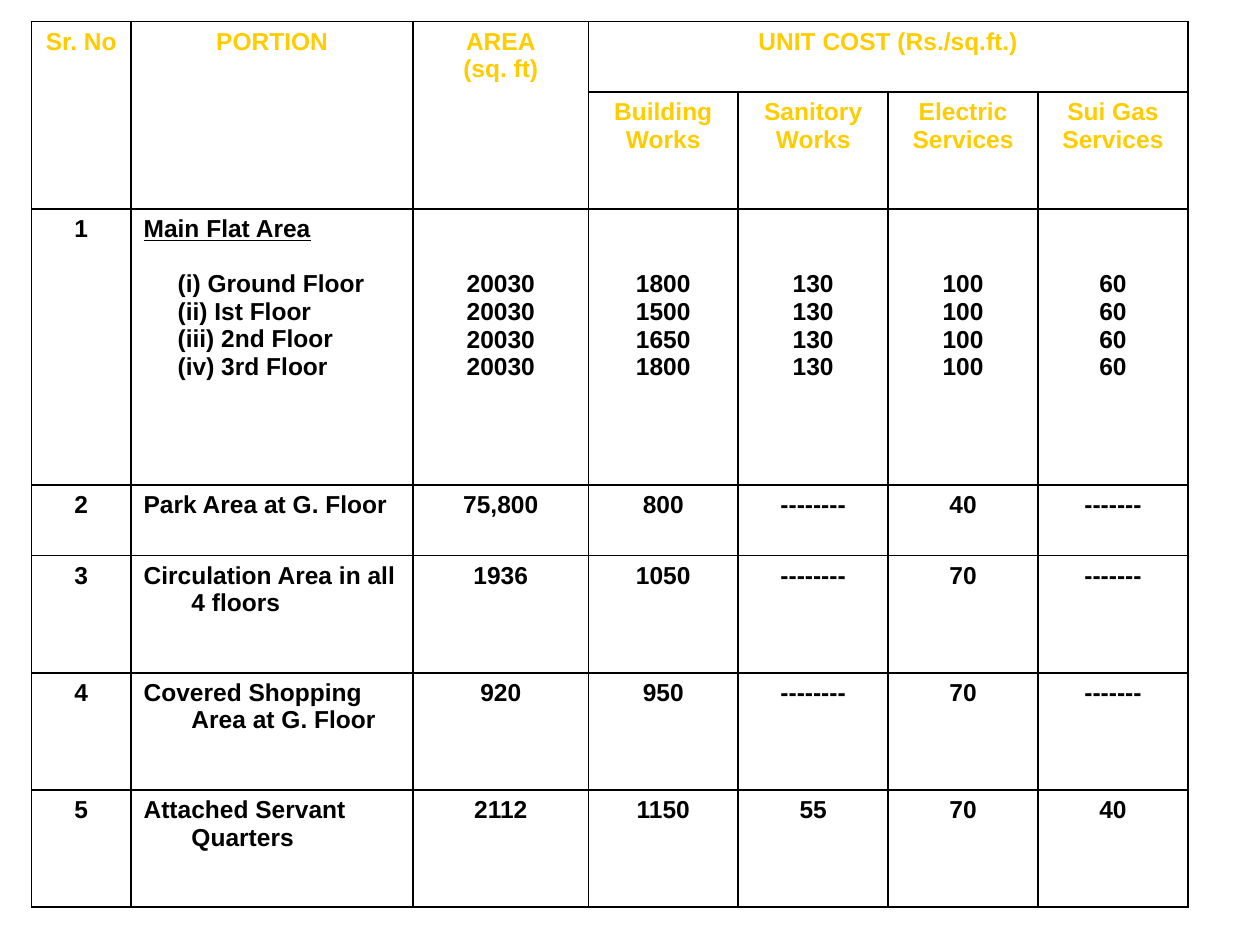
from dataclasses import dataclass

from lxml.etree import SubElement
from pptx import Presentation
from pptx.dml.color import RGBColor
from pptx.enum.text import PP_ALIGN
from pptx.oxml.ns import qn
from pptx.util import Inches, Pt


@dataclass(frozen=True)
class Theme:
    font: str = "Arial"
    size: int = 14
    heading: str = "FFCC00"
    body: str = "000000"
    border: str = "000000"
    border_width: int = 1
    hanging: float = 0.38
    list_indent: float = 0.27
    line: float = 15.8


THEME = Theme()
COLS = (0.79, 2.24, 1.39, 1.19, 1.19, 1.19, 1.19)
ROWS = (0.56, 0.93, 2.19, 0.56, 0.93, 0.93, 0.93)

TOP_HEADINGS = ("Sr. No", "PORTION", "AREA\n(sq. ft)", "UNIT COST (Rs./sq.ft.)")
COST_HEADINGS = ("Building\nWorks", "Sanitory\nWorks", "Electric\nServices", "Sui Gas\nServices")
FLOORS = ("(i) Ground Floor", "(ii) Ist Floor", "(iii) 2nd Floor", "(iv) 3rd Floor")
FLOOR_VALUES = (
    ("20030", "20030", "20030", "20030"),
    ("1800", "1500", "1650", "1800"),
    ("130",) * 4,
    ("100",) * 4,
    ("60",) * 4,
)
PORTIONS = (
    ("2", "Park Area at G. Floor", "75,800", "800", "--------", "40", "-------"),
    ("3", "Circulation Area in all 4 floors", "1936", "1050", "--------", "70", "-------"),
    ("4", "Covered Shopping Area at G. Floor", "920", "950", "--------", "70", "-------"),
    ("5", "Attached Servant Quarters", "2112", "1150", "55", "70", "40"),
)


def set_indent(p, left, first):
    pPr = p._p.get_or_add_pPr()
    pPr.set("marL", str(Inches(left)))
    pPr.set("indent", str(Inches(first)))


def write(cell, lines, color=THEME.body, align=PP_ALIGN.CENTER):
    """Put one hanging paragraph per line in the cell and return the paragraphs."""
    tf = cell.text_frame
    for i, line in enumerate(lines):
        p = tf.paragraphs[0] if i == 0 else tf.add_paragraph()
        p.alignment = align
        set_indent(p, THEME.hanging, -THEME.hanging)
        r = p.add_run()
        r.text = line
        r.font.name = THEME.font
        r.font.size = Pt(THEME.size)
        r.font.bold = True
        r.font.color.rgb = RGBColor.from_string(color)
    return tf.paragraphs


def outline(cell):
    cell.fill.background()
    tcPr = cell._tc.get_or_add_tcPr()
    for i, side in enumerate(("a:lnL", "a:lnR", "a:lnT", "a:lnB")):
        ln = tcPr.makeelement(qn(side), {"w": str(Pt(THEME.border_width))})
        fill = SubElement(ln, qn("a:solidFill"))
        SubElement(fill, qn("a:srgbClr"), val=THEME.border)
        tcPr.insert(i, ln)


def add_grid(slide, left, top):
    table = slide.shapes.add_table(
        len(ROWS), len(COLS), Inches(left), Inches(top), Inches(sum(COLS)), Inches(sum(ROWS))
    ).table
    table.first_row = table.horz_banding = False
    for column, width in zip(table.columns, COLS):
        column.width = Inches(width)
    for row, height in zip(table.rows, ROWS):
        row.height = Inches(height)
    for cell in table.iter_cells():
        outline(cell)
    return table


def fill_headings(table):
    for c in range(3):
        table.cell(0, c).merge(table.cell(1, c))
    table.cell(0, 3).merge(table.cell(0, 6))
    for c, text in enumerate(TOP_HEADINGS):
        write(table.cell(0, c), text.split("\n"), THEME.heading)
    for c, text in enumerate(COST_HEADINGS, 3):
        write(table.cell(1, c), text.split("\n"), THEME.heading)


def fill_main_flat(table, row):
    """Fill the floor-by-floor row, with values level with the floor names."""
    write(table.cell(row, 0), ["1"])
    title, *floors = write(
        table.cell(row, 1), ("Main Flat Area", *FLOORS), align=PP_ALIGN.LEFT
    )
    title.runs[0].font.underline = True
    for p in floors:
        set_indent(p, THEME.list_indent, 0)
    floors[0].space_before = Pt(THEME.line)
    for c, values in enumerate(FLOOR_VALUES, 2):
        cell = table.cell(row, c)
        cell.margin_top = Inches(0.05) + Pt(2 * THEME.line)
        write(cell, values)


def fill_portions(table, first_row):
    for r, values in enumerate(PORTIONS, first_row):
        for c, text in enumerate(values):
            align = PP_ALIGN.LEFT if c == 1 else PP_ALIGN.CENTER
            write(table.cell(r, c), [text], align=align)


def main():
    prs = Presentation()
    prs.slide_width, prs.slide_height = Inches(10), Inches(7.5)
    slide = prs.slides.add_slide(prs.slide_layouts[6])
    table = add_grid(slide, 0.25, 0.17)
    fill_headings(table)
    fill_main_flat(table, 2)
    fill_portions(table, 3)
    prs.save("out.pptx")


if __name__ == "__main__":
    main()
